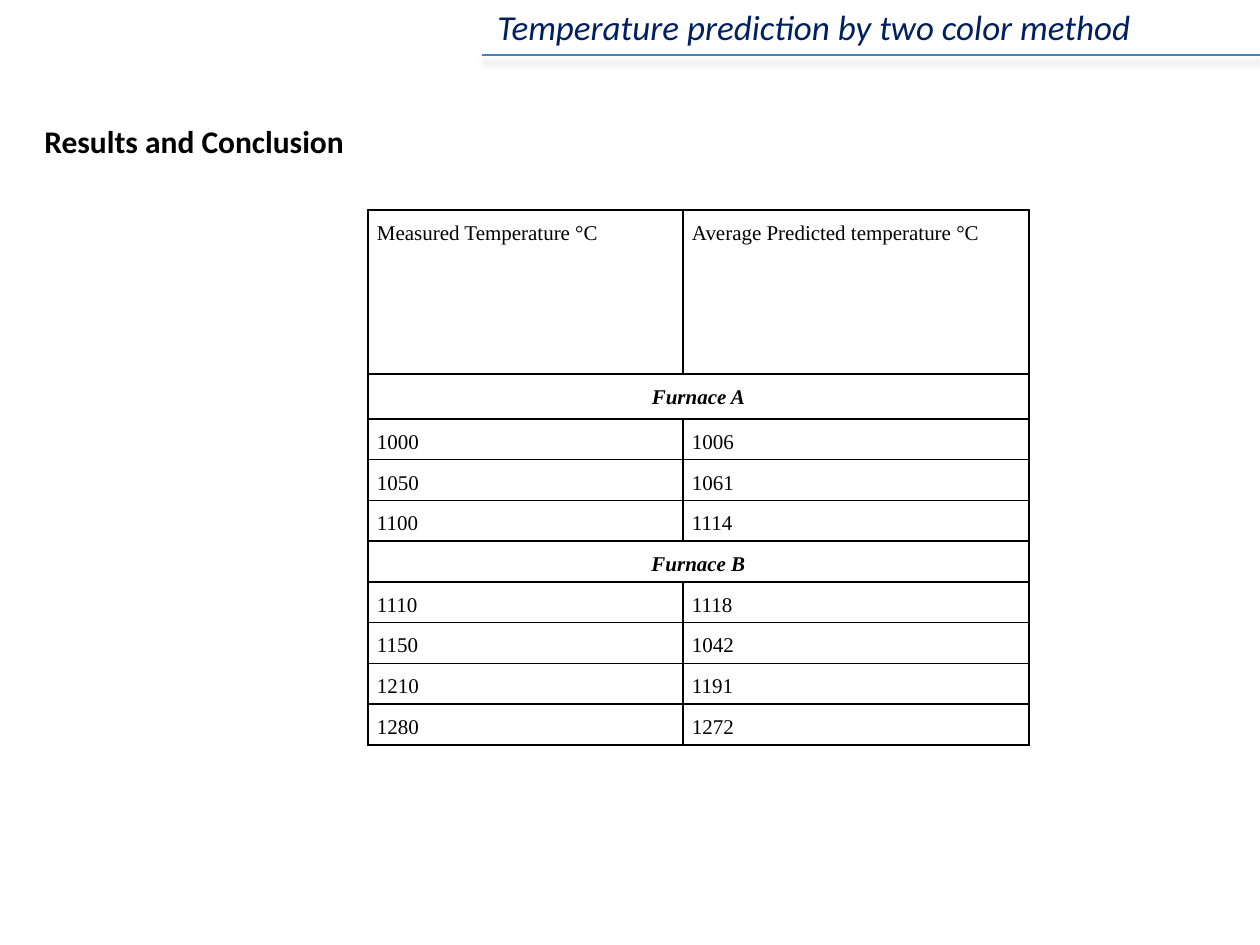
from lxml import etree
from pptx import Presentation
from pptx import util as u
from pptx.dml.color import RGBColor
from pptx.enum import shapes, text
from pptx.oxml.ns import qn

SCALE = u.Inches(1) / 126
ALIGN = text.PP_ALIGN

HEADINGS = ("Measured Temperature °C", "Average Predicted temperature °C")
FURNACES = {
    "Furnace A": [(1000, 1006), (1050, 1061), (1100, 1114)],
    "Furnace B": [(1110, 1118), (1150, 1042), (1210, 1191), (1280, 1272)],
}


def px(length):
    return u.Emu(round(length * SCALE))


def colour(value):
    return RGBColor.from_string(value)


def child(parent, tag, **attributes):
    return etree.SubElement(parent, qn(tag), attributes)


def write(frame, words, font="Calibri", size=12, hex_colour="000000", bold=False,
          italic=False, align=ALIGN.LEFT, spacing=None):
    paragraph = frame.paragraphs[0]
    paragraph.alignment = align
    paragraph.line_spacing = spacing
    run = paragraph.add_run()
    run.text = words
    run.font.name = font
    run.font.size = u.Pt(size)
    run.font.bold = bold
    run.font.italic = italic
    run.font.color.rgb = colour(hex_colour)


def add_text(slide, box, words, **style):
    frame = slide.shapes.add_textbox(*map(px, box)).text_frame
    frame.word_wrap = True
    frame.auto_size = text.MSO_AUTO_SIZE.SHAPE_TO_FIT_TEXT
    write(frame, words, **style)


def add_header(slide, left, top, width, height):
    add_text(slide, (left + 3, top, 1238, height),
             "Temperature prediction by two color method",
             size=20, hex_colour="002060", italic=True)
    bottom = px(top + height)
    rule = slide.shapes.add_connector(
        shapes.MSO_CONNECTOR.STRAIGHT, px(left), bottom, px(left + width), bottom)
    rule.line.color.rgb = colour("4B7EBC")
    rule.line.width = u.Pt(0.75)
    effects = child(rule._element.spPr, "a:effectLst")
    shadow = child(effects, "a:outerShdw", blurRad=str(u.Pt(4)), dist=str(u.Pt(4)),
                   dir="5400000", rotWithShape="0")
    child(child(shadow, "a:srgbClr", val="000000"), "a:alpha", val="39000")


def add_borders(cell):
    properties = cell._tc.get_or_add_tcPr()
    for place, side in enumerate(("a:lnL", "a:lnR", "a:lnT", "a:lnB")):
        border = child(properties, side, w=str(u.Pt(1)))
        child(child(border, "a:solidFill"), "a:srgbClr", val="000000")
        properties.insert(place, border)


def fill_cell(cell, words, **style):
    cell.margin_left = cell.margin_right = px(9)
    cell.margin_top = cell.margin_bottom = 0
    write(cell.text_frame, words, font="Times New Roman", spacing=1.5, **style)


def add_results(slide, left, top, width, height):
    rows = [HEADINGS]
    for furnace, readings in FURNACES.items():
        rows += [(furnace,), *readings]
    table = slide.shapes.add_table(
        len(rows), 2, *map(px, (left, top, width, height))).table
    table.first_row = table.horz_banding = False

    measured_width, heading_height, furnace_height = 315, 164, 45
    table.columns[0].width = px(measured_width)
    table.columns[1].width = px(width - measured_width)
    reading_height = (height - heading_height - furnace_height) / (len(rows) - 2)
    for index, values in enumerate(rows):
        fixed = {0: heading_height, 1: furnace_height}
        table.rows[index].height = px(fixed.get(index, reading_height))
        for column in range(2):
            cell = table.cell(index, column)
            cell.fill.background()
            add_borders(cell)
        if len(values) == 1:
            table.cell(index, 0).merge(table.cell(index, 1))
            fill_cell(table.cell(index, 0), values[0], bold=True, italic=True,
                      align=ALIGN.CENTER)
        else:
            for column, value in enumerate(values):
                fill_cell(table.cell(index, column), str(value), align=ALIGN.JUSTIFY)


def main():
    deck = Presentation()
    deck.slide_width, deck.slide_height = px(1260), px(945)
    slide = deck.slides.add_slide(deck.slide_layouts[6])
    add_header(slide, 482, -1, 778, 56)
    add_text(slide, (32, 116, 1197, 89), "Results and Conclusion", size=18, bold=True)
    add_results(slide, 368, 210, 661, 535)
    deck.save("out.pptx")


if __name__ == "__main__":
    main()
